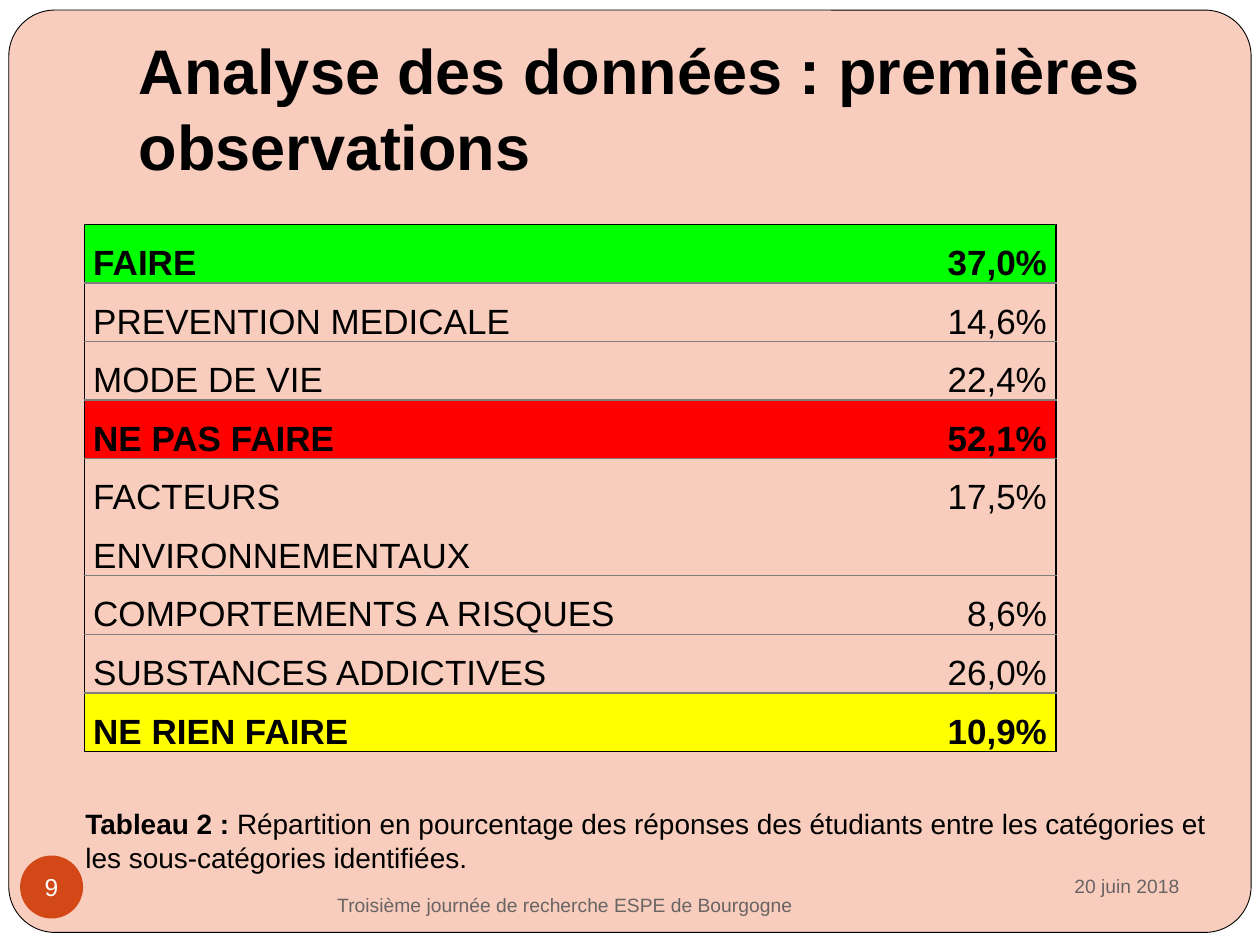
from lxml import etree
from pptx import Presentation
from pptx.dml.color import RGBColor
from pptx.enum.shapes import MSO_SHAPE
from pptx.enum.text import MSO_ANCHOR, MSO_AUTO_SIZE, PP_ALIGN
from pptx.oxml.ns import qn
from pptx.util import Inches, Pt

LEFT, CENTER, RIGHT, JUSTIFY = PP_ALIGN.LEFT, PP_ALIGN.CENTER, PP_ALIGN.RIGHT, PP_ALIGN.JUSTIFY
MIDDLE, BOTTOM = MSO_ANCHOR.MIDDLE, MSO_ANCHOR.BOTTOM
ROUNDED, OVAL = MSO_SHAPE.ROUNDED_RECTANGLE, MSO_SHAPE.OVAL
NO_FIT = MSO_AUTO_SIZE.NONE
TITLE_ONLY = 5

COLORS = {
    "panel": "F8CDBD", "ink": "000000", "rule": "7F7F7F", "muted": "696464",
    "badge": "D34817", "white": "FFFFFF",
    "do": "00FF00", "avoid": "FF0000", "nothing": "FFFF00",
}
COLS, ROWS = 100, 75
ANSWERS = [
    ("FAIRE", "37,0%", "do"),
    ("PREVENTION MEDICALE", "14,6%", None),
    ("MODE DE VIE", "22,4%", None),
    ("NE PAS FAIRE", "52,1%", "avoid"),
    ("FACTEURS ENVIRONNEMENTAUX", "17,5%", None),
    ("COMPORTEMENTS A RISQUES", "8,6%", None),
    ("SUBSTANCES ADDICTIVES", "26,0%", None),
    ("NE RIEN FAIRE", "10,9%", "nothing"),
]


class Deck:
    font = "Arial"

    def __init__(self):
        self.prs = Presentation()
        self.prs.slide_width, self.prs.slide_height = Inches(10), Inches(7.5)
        self.s = self.prs.slides.add_slide(self.prs.slide_layouts[TITLE_ONLY])

    def x(self, cols):
        return round(self.prs.slide_width * cols / COLS)

    def y(self, rows):
        return round(self.prs.slide_height * rows / ROWS)

    def box(self, left, top, width, height):
        return self.x(left), self.y(top), self.x(width), self.y(height)

    def color(self, name):
        return RGBColor.from_string(COLORS[name])

    def add_runs(self, tf, runs, size, color="ink", align=LEFT, spacing=None):
        p = tf.paragraphs[0]
        p.alignment = align
        if spacing:
            p.line_spacing = spacing
        for text, bold in runs:
            r = p.add_run()
            r.text = text
            r.font.name, r.font.size, r.font.bold = self.font, Pt(size), bold
            r.font.color.rgb = self.color(color)

    def shape(self, kind, at, fill, line=None):
        sp = self.s.shapes.add_shape(kind, *self.box(*at))
        sp.shadow.inherit = False
        sp.fill.solid()
        sp.fill.fore_color.rgb = self.color(fill)
        if line:
            sp.line.color.rgb = self.color(line)
            sp.line.width = Pt(0.5)
        else:
            sp.line.fill.background()
        return sp

    def panel(self, at):
        sp = self.shape(ROUNDED, at, "panel", "ink")
        sp.adjustments[0] = 0.05
        self.s.shapes.element.insert(2, sp.element)

    def title(self, at, text):
        sp = self.s.shapes.title
        sp.left, sp.top, sp.width, sp.height = self.box(*at)
        tf = sp.text_frame
        tf.auto_size, tf.word_wrap, tf.vertical_anchor = NO_FIT, True, BOTTOM
        tf.margin_bottom = self.y(1)
        self.add_runs(tf, [(text, True)], 36)

    def text(self, at, runs, size, color="ink", align=LEFT):
        tf = self.s.shapes.add_textbox(*self.box(*at)).text_frame
        tf.word_wrap, tf.vertical_anchor = True, MIDDLE
        self.add_runs(tf, runs, size, color, align)

    def badge(self, at, text):
        tf = self.shape(OVAL, at, "badge").text_frame
        tf.margin_left = tf.margin_right = tf.margin_top = tf.margin_bottom = 0
        tf.word_wrap, tf.vertical_anchor = False, MIDDLE
        self.add_runs(tf, [(text, False)], 14, "white", CENTER)

    def borders(self, cell, edges):
        tc_pr = cell._tc.get_or_add_tcPr()
        for side, color in edges.items():
            ln = etree.SubElement(tc_pr, qn(f"a:ln{side}"), w=str(Pt(1)))
            if color:
                fill = etree.SubElement(ln, qn("a:solidFill"))
                etree.SubElement(fill, qn("a:srgbClr"), val=COLORS[color])
            else:
                etree.SubElement(ln, qn("a:noFill"))

    def table(self, at, widths, row_height, rows):
        table = self.s.shapes.add_table(len(rows), len(widths), *self.box(*at)).table
        table.first_row = table.horz_banding = False
        for col, width in zip(table.columns, widths):
            col.width = self.x(width)
        for i, (label, share, fill) in enumerate(rows):
            table.rows[i].height = self.y(row_height)
            top = "rule" if i else "ink"
            bottom = "rule" if i < len(rows) - 1 else "ink"
            for j, (text, align) in enumerate([(label, JUSTIFY), (share, RIGHT)]):
                cell = table.cell(i, j)
                cell.margin_left = cell.margin_right = self.x(0.7)
                cell.margin_top = cell.margin_bottom = 0
                self.add_runs(cell.text_frame, [(text, bool(fill))], 20, align=align, spacing=1.5)
                self.borders(cell, {
                    "L": None if j else "ink", "R": "ink" if j else None,
                    "T": top, "B": bottom,
                })
                if fill:
                    cell.fill.solid()
                    cell.fill.fore_color.rgb = self.color(fill)
                else:
                    cell.fill.background()


def main():
    deck = Deck()
    deck.panel((0.7, 0.8, 98.6, 73.2))
    deck.title((10, 3, 85, 12.5), "Analyse des données : premières observations")
    deck.table((6.7, 17.8, 77.1, 45), (46.2, 30.9), 4.4, ANSWERS)
    deck.text((5.8, 63.5, 94.1, 6.4), [
        ("Tableau 2 : ", True),
        ("Répartition en pourcentage des réponses des étudiants entre les catégories "
         "et les sous-catégories identifiées.", False),
    ], 16)
    deck.text((67.5, 67.7, 27.1, 5.2), [("20 juin 2018", False)], 11, "muted", RIGHT)
    deck.text((9.8, 69.9, 70.1, 3.8),
              [("Troisième journée de recherche ESPE de Bourgogne", False)], 11, "muted", CENTER)
    deck.badge((1.6, 67.9, 5, 5), "9")
    deck.prs.save("out.pptx")


if __name__ == "__main__":
    main()
